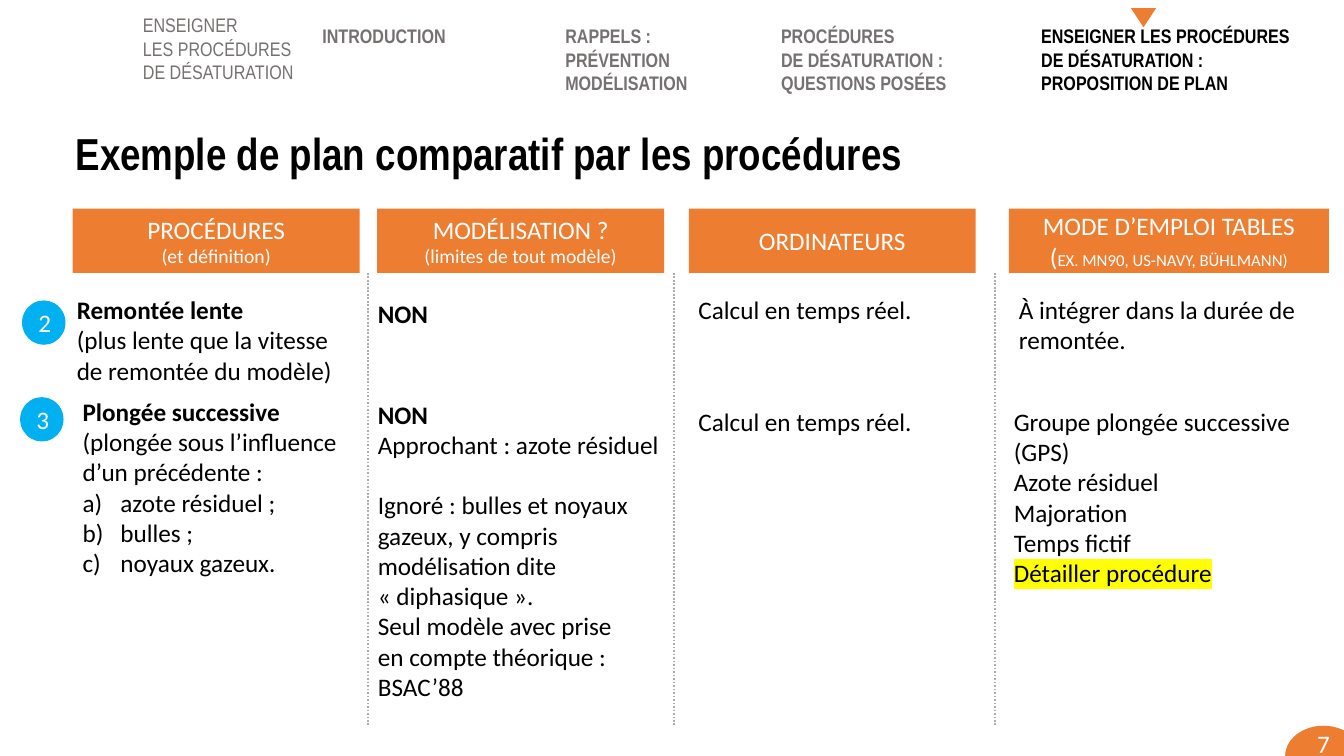
from dataclasses import dataclass

from lxml.etree import SubElement
from pptx import Presentation
from pptx.dml.color import RGBColor
from pptx.enum.dml import MSO_LINE
from pptx.enum.shapes import MSO_CONNECTOR, MSO_SHAPE
from pptx.enum.text import MSO_ANCHOR, MSO_AUTO_SIZE, PP_ALIGN
from pptx.oxml.ns import qn
from pptx.util import Pt

ORANGE = RGBColor(0xED, 0x7D, 0x31)
BLUE = RGBColor(0x00, 0xB0, 0xF0)
GREY = RGBColor(0x76, 0x71, 0x71)
RULE_GREY = RGBColor(0xAF, 0xAB, 0xAB)
BLACK = RGBColor(0, 0, 0)
WHITE = RGBColor(0xFF, 0xFF, 0xFF)
YELLOW = RGBColor(0xFF, 0xFF, 0x00)

HEADING_FONT = "Arial Narrow"
BODY_FONT = "Calibri"
LIST_INDENT = 27


@dataclass(frozen=True)
class Line:
    """One paragraph; a newline in the text is a line break."""
    text: str
    size: float = 18
    bold: bool = False
    opening: str = ""
    numbered: bool = False
    before: float = 0
    highlight: RGBColor | None = None


@dataclass(frozen=True)
class Block:
    left: float
    top: float
    width: float
    height: float
    lines: tuple[Line, ...]


@dataclass(frozen=True)
class MenuEntry:
    left: float
    top: float
    width: float
    height: float
    text: str
    color: RGBColor = GREY
    bold: bool = True


def add_text(para, text: str, *, size: float = 18, font: str = BODY_FONT,
             color: RGBColor = BLACK, bold: bool = False,
             highlight: RGBColor | None = None) -> None:
    for index, part in enumerate(text.split("\n")):
        if index:
            para.add_line_break()
        span = para.add_run()
        span.text = part
        span.font.size = Pt(size)
        span.font.name = font
        span.font.bold = bold
        span.font.color.rgb = color
        if highlight is not None:
            properties = span.font._element
            mark = SubElement(properties, qn("a:highlight"))
            SubElement(mark, qn("a:srgbClr"), val=str(highlight))
            properties.find(qn("a:solidFill")).addnext(mark)


def set_list_format(para, numbered: bool) -> None:
    properties = para._p.get_or_add_pPr()
    indent = Pt(LIST_INDENT) if numbered else 0
    properties.set("marL", str(indent))
    properties.set("indent", str(-indent))
    if numbered:
        SubElement(properties, qn("a:buFont"), typeface="+mj-lt")
        SubElement(properties, qn("a:buAutoNum"), type="alphaLcParenR")
    else:
        SubElement(properties, qn("a:buNone"))


def write_lines(box, lines: tuple[Line, ...], *, align: PP_ALIGN = PP_ALIGN.LEFT,
                font: str = BODY_FONT, color: RGBColor = BLACK) -> None:
    frame = box.text_frame
    for index, line in enumerate(lines):
        para = frame.add_paragraph() if index else frame.paragraphs[0]
        set_list_format(para, line.numbered)
        para.alignment = align
        para.space_before = Pt(line.before)
        if line.opening:
            add_text(para, line.opening, font=font, color=color)
        add_text(para, line.text, size=line.size, font=font, color=color,
                 bold=line.bold, highlight=line.highlight)


def place(box, left: float, top: float, width: float, height: float,
          wrap: bool = False) -> None:
    box.left, box.top, box.width, box.height = Pt(left), Pt(top), Pt(width), Pt(height)
    box.text_frame.word_wrap = wrap
    box.text_frame.auto_size = MSO_AUTO_SIZE.SHAPE_TO_FIT_TEXT
    box.text_frame.vertical_anchor = MSO_ANCHOR.TOP


def add_filled(page, kind: MSO_SHAPE, left: float, top: float, width: float,
               height: float, color: RGBColor, lines: tuple[Line, ...] = ()):
    shape = page.shapes.add_shape(kind, Pt(left), Pt(top), Pt(width), Pt(height))
    shape.shadow.inherit = False
    shape.fill.solid()
    shape.fill.fore_color.rgb = color
    shape.line.fill.background()
    write_lines(shape, lines, align=PP_ALIGN.CENTER, color=WHITE)
    return shape


def add_block(page, block: Block, *, font: str = BODY_FONT,
              color: RGBColor = BLACK) -> None:
    box = page.shapes.add_textbox(0, 0, 0, 0)
    place(box, block.left, block.top, block.width, block.height)
    write_lines(box, block.lines, font=font, color=color)


def add_divider(page, left: float, top: float, bottom: float) -> None:
    rule = page.shapes.add_connector(MSO_CONNECTOR.STRAIGHT, Pt(left), Pt(top),
                                     Pt(left), Pt(bottom))
    rule.line.color.rgb = RULE_GREY
    rule.line.width = Pt(1.25)
    rule.line.dash_style = MSO_LINE.ROUND_DOT
    SubElement(rule._element.spPr, qn("a:effectLst"))


HEADERS = (
    Block(52, 149, 205, 46, (Line("PROCÉDURES"), Line("(et définition)", 14))),
    Block(269.5, 149, 205, 46,
          (Line("MODÉLISATION ?"), Line("(limites de tout modèle)", 14))),
    Block(492, 149, 205, 46, (Line("ORDINATEURS"),)),
    Block(720.7, 149, 228.5, 46,
          (Line("MODE D’EMPLOI TABLES"),
           Line("EX. MN90, US-NAVY, BÜHLMANN)", 12, opening="("))),
)
REAL_TIME = (Line("Calcul en temps réel."),)
CELLS = (
    Block(47.8, 206.8, 199.5, 72.7,
          (Line("Remontée lente", bold=True),
           Line("(plus lente que la vitesse\nde remontée du modèle)"))),
    Block(262.8, 209.5, 51, 29, (Line("NON", bold=True),)),
    Block(491.8, 206.8, 168.5, 29, REAL_TIME),
    Block(720.7, 206.8, 214.5, 51,
          (Line("À intégrer dans la durée de"), Line("remontée."))),
    Block(262.8, 281.5, 217.5, 225.4,
          (Line("NON", bold=True),
           Line("Approchant : azote résiduel"),
           Line("Ignoré : bulles et noyaux\ngazeux, y compris\nmodélisation dite\n"
                "«\u00a0diphasique\u00a0».", before=21.6),
           Line("Seul modèle avec prise\nen compte théorique :\nBSAC’88"))),
    Block(491.8, 286.6, 168.5, 29, REAL_TIME),
    Block(717.1, 286.6, 219, 138,
          (Line("Groupe plongée successive"), Line("(GPS)"), Line("Azote résiduel"),
           Line("Majoration"), Line("Temps fictif"),
           Line("Détailler procédure", highlight=YELLOW))),
)
SUCCESSIVE_DIVE = Block(
    51.8, 279.4, 198.7, 138.2,
    (Line("Plongée successive", bold=True),
     Line("(plongée sous l’influence\nd’un précédente :"),
     Line("azote résiduel ;", numbered=True),
     Line("bulles ;", numbered=True),
     Line("noyaux gazeux.", numbered=True)))
MENU = (
    MenuEntry(95, 5.8, 123.8, 58.3, "ENSEIGNER|LES PROCÉDURES|DE DÉSATURATION", bold=False),
    MenuEntry(223.2, 13.7, 105, 24.5, "INTRODUCTION"),
    MenuEntry(396.7, 13.7, 102.2, 58.3, "RAPPELS :|PRÉVENTION|MODÉLISATION"),
    MenuEntry(550.8, 13.7, 133.2, 58.3, "PROCÉDURES|DE DÉSATURATION :|QUESTIONS POSÉES"),
    MenuEntry(736.6, 13.7, 193, 58.3,
              "ENSEIGNER LES PROCÉDURES|DE DÉSATURATION :|PROPOSITION DE PLAN", BLACK),
)


def main() -> None:
    deck = Presentation()
    deck.slide_width, deck.slide_height = Pt(960), Pt(540)
    page = deck.slides.add_slide(deck.slide_layouts[1])

    # Title and numbered list
    title = page.shapes.title
    place(title, 46.8, 86.4, 849.6, 46, wrap=True)
    write_lines(title, (Line(
        "Exemple de plan comparatif par les procédures", 32, True),), font=HEADING_FONT)
    body = page.placeholders[1]
    place(body, SUCCESSIVE_DIVE.left, SUCCESSIVE_DIVE.top,
          SUCCESSIVE_DIVE.width, SUCCESSIVE_DIVE.height)
    write_lines(body, SUCCESSIVE_DIVE.lines)

    # Page number
    badge = add_filled(page, MSO_SHAPE.OVAL, 918, 518.4, 54.7, 43.2, ORANGE, (Line("7"),))
    badge.text_frame.margin_bottom = Pt(21.6)

    # Column headers and dividers
    for header in HEADERS:
        add_filled(page, MSO_SHAPE.RECTANGLE, header.left, header.top, header.width,
                   header.height, ORANGE, header.lines)
    for left in (262.8, 481.7, 710.6):
        add_divider(page, left, 195, 518.4)

    # Comparison cells and row numbers
    for cell in CELLS:
        add_block(page, cell)
    for number, left, top in (("2", 15.8, 214.6), ("3", 14.4, 283.7)):
        add_filled(page, MSO_SHAPE.OVAL, left, top, 31, 31.7, BLUE, (Line(number),))
    add_filled(page, MSO_SHAPE.RECTANGLE, 782.6, 393.1, 5, 5, WHITE)

    # Navigation menu with its current-section marker
    for entry in MENU:
        lines = tuple(Line(text, 14, entry.bold) for text in entry.text.split("|"))
        add_block(page, Block(entry.left, entry.top, entry.width, entry.height, lines),
                  font=HEADING_FONT, color=entry.color)
    marker = add_filled(page, MSO_SHAPE.ISOSCELES_TRIANGLE, 807.8, 5.8, 18, 13.7, ORANGE)
    marker.rotation = 180

    deck.save("out.pptx")


if __name__ == "__main__":
    main()
